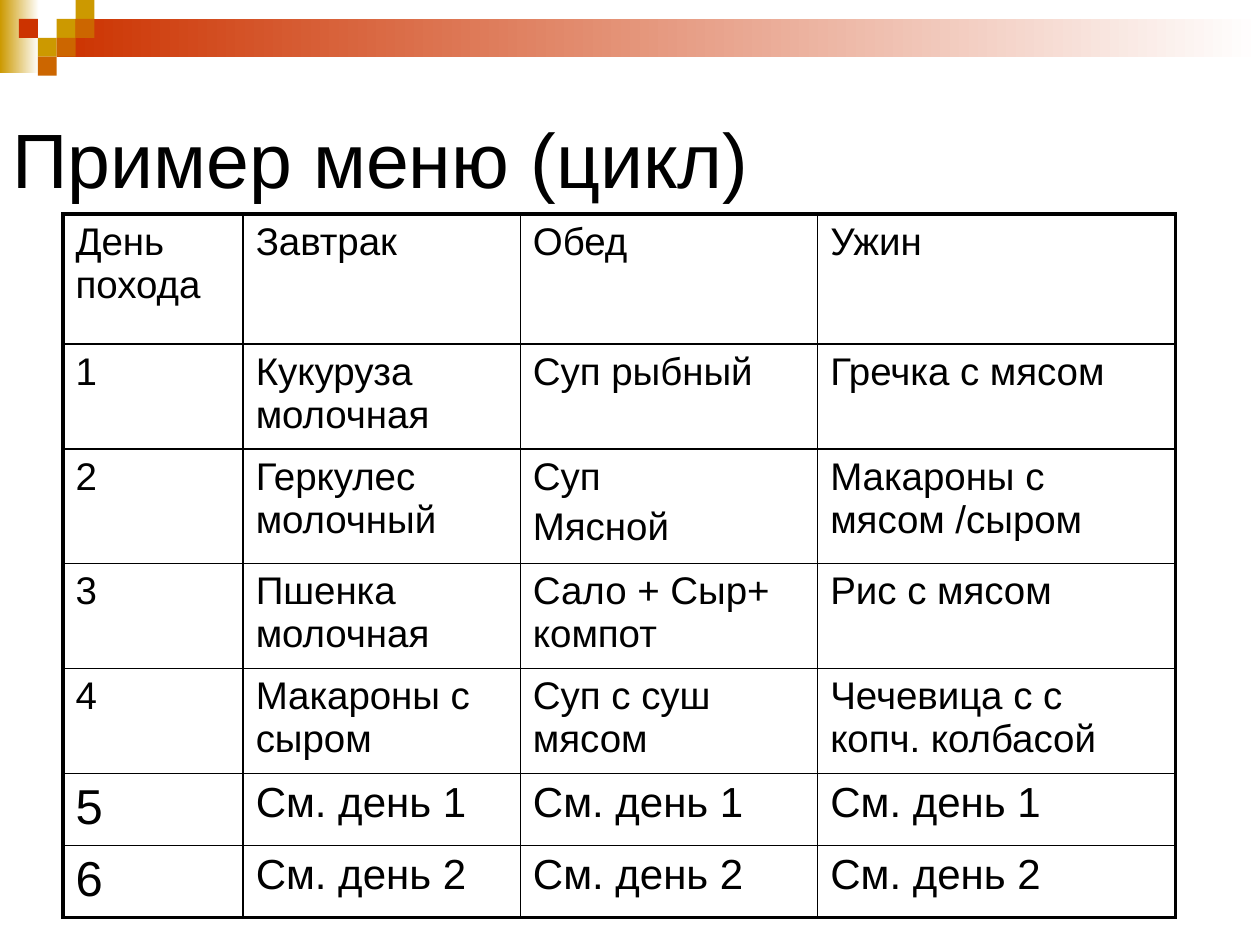
from lxml import etree
from pptx import Presentation
from pptx.dml.color import RGBColor
from pptx.enum import shapes, text
from pptx.oxml import ns
from pptx.util import Inches, Pt

BLACK = RGBColor(0x00, 0x00, 0x00)
WHITE = RGBColor(0xFF, 0xFF, 0xFF)
GOLD = RGBColor(0xCC, 0x99, 0x00)
ORANGE = RGBColor(0xCC, 0x66, 0x00)
RED = RGBColor(0xCC, 0x33, 0x00)
FONT = "Arial"
THIN, THICK = 1, 2.25

# Mosaic tiles: column, row, colour
TILES = [(3, 1, GOLD), (4, 0, GOLD), (4, 1, ORANGE), (2, 2, GOLD),
         (1, 1, RED), (3, 2, ORANGE), (2, 3, ORANGE)]

COLS = [1.43, 2.2, 2.36, 2.84]
ROWS = [1.03, 0.83, 0.91, 0.83, 0.83, 0.57, 0.57]
MENU = [
    ["День похода", "Завтрак", "Обед", "Ужин"],
    ["1", "Кукуруза молочная", "Суп рыбный", "Гречка с мясом"],
    ["2", "Геркулес молочный", "Суп\nМясной", "Макароны с мясом /сыром"],
    ["3", "Пшенка молочная", "Сало + Сыр+ компот", "Рис с мясом"],
    ["4", "Макароны с сыром", "Суп с суш мясом", "Чечевица с с копч. колбасой"],
    ["5"] + ["См. день 1"] * 3,
    ["6"] + ["См. день 2"] * 3,
]


def add_rect(slide, box, color, fade=False):
    rect = slide.shapes.add_shape(shapes.MSO_SHAPE.RECTANGLE, *map(Inches, box))
    rect.shadow.inherit = False
    rect.line.fill.background()
    if fade:
        rect.fill.gradient()
        rect.fill.gradient_angle = 0
        for stop, tone in zip(rect.fill.gradient_stops, (color, WHITE)):
            stop.color.rgb = tone
    else:
        rect.fill.solid()
        rect.fill.fore_color.rgb = color


def add_band(slide, left, top, width, tile):
    add_rect(slide, (left, top, 0.31, 0.58), GOLD, fade=True)
    start = 3 * tile
    add_rect(slide, (left + start, top + tile, width - start, 2 * tile), RED, fade=True)
    for col, row, color in TILES:
        add_rect(slide, (left + col * tile, top + row * tile, tile, tile), color)


def style(par, size):
    par.font.name = FONT
    par.font.size = Pt(size)
    par.font.color.rgb = BLACK


def add_title(slide, left, top, width, height):
    frame = slide.shapes.add_textbox(*map(Inches, (left, top, width, height))).text_frame
    frame.word_wrap = True
    frame.vertical_anchor = text.MSO_ANCHOR.MIDDLE
    frame.text = "Пример меню (цикл)"
    style(frame.paragraphs[0], 44)


def set_edges(cell, widths):
    props = cell._tc.get_or_add_tcPr()
    for i, (side, width) in enumerate(zip("LRTB", widths)):
        line = etree.Element(ns.qn("a:ln" + side), w=str(Pt(width)))
        fill = etree.SubElement(line, ns.qn("a:solidFill"))
        etree.SubElement(fill, ns.qn("a:srgbClr"), val=str(BLACK))
        props.insert(i, line)


def fill_cell(cell, words, size):
    cell.fill.background()
    cell.text = words
    for i, par in enumerate(cell.text_frame.paragraphs):
        style(par, size)
        if i:
            par.space_before = Pt(0.2 * size)


def add_menu(slide, left, top):
    box = map(Inches, (left, top, sum(COLS), sum(ROWS)))
    table = slide.shapes.add_table(len(ROWS), len(COLS), *box).table
    table.first_row = table.horz_banding = False
    for col, width in zip(table.columns, COLS):
        col.width = Inches(width)
    for row, height in zip(table.rows, ROWS):
        row.height = Inches(height)
    for r, line in enumerate(MENU):
        for c, words in enumerate(line):
            # The last two days refer back in larger type
            size = 22 if r < 5 else 24 if c else 28
            cell = table.cell(r, c)
            fill_cell(cell, words, size)
            # Thick frame, thin inner grid
            outer = (c == 0, c == len(COLS) - 1, r == 0, r == len(ROWS) - 1)
            set_edges(cell, [THICK if edge else THIN for edge in outer])


def main():
    deck = Presentation()
    deck.slide_width, deck.slide_height = Inches(10), Inches(7.5)
    slide = deck.slides.add_slide(deck.slide_layouts[6])
    add_band(slide, 0, 0, 10, 0.15)
    add_title(slide, 0, 0.5, 9, 1.5)
    add_menu(slide, 0.5, 1.7)
    deck.save("out.pptx")


if __name__ == "__main__":
    main()
